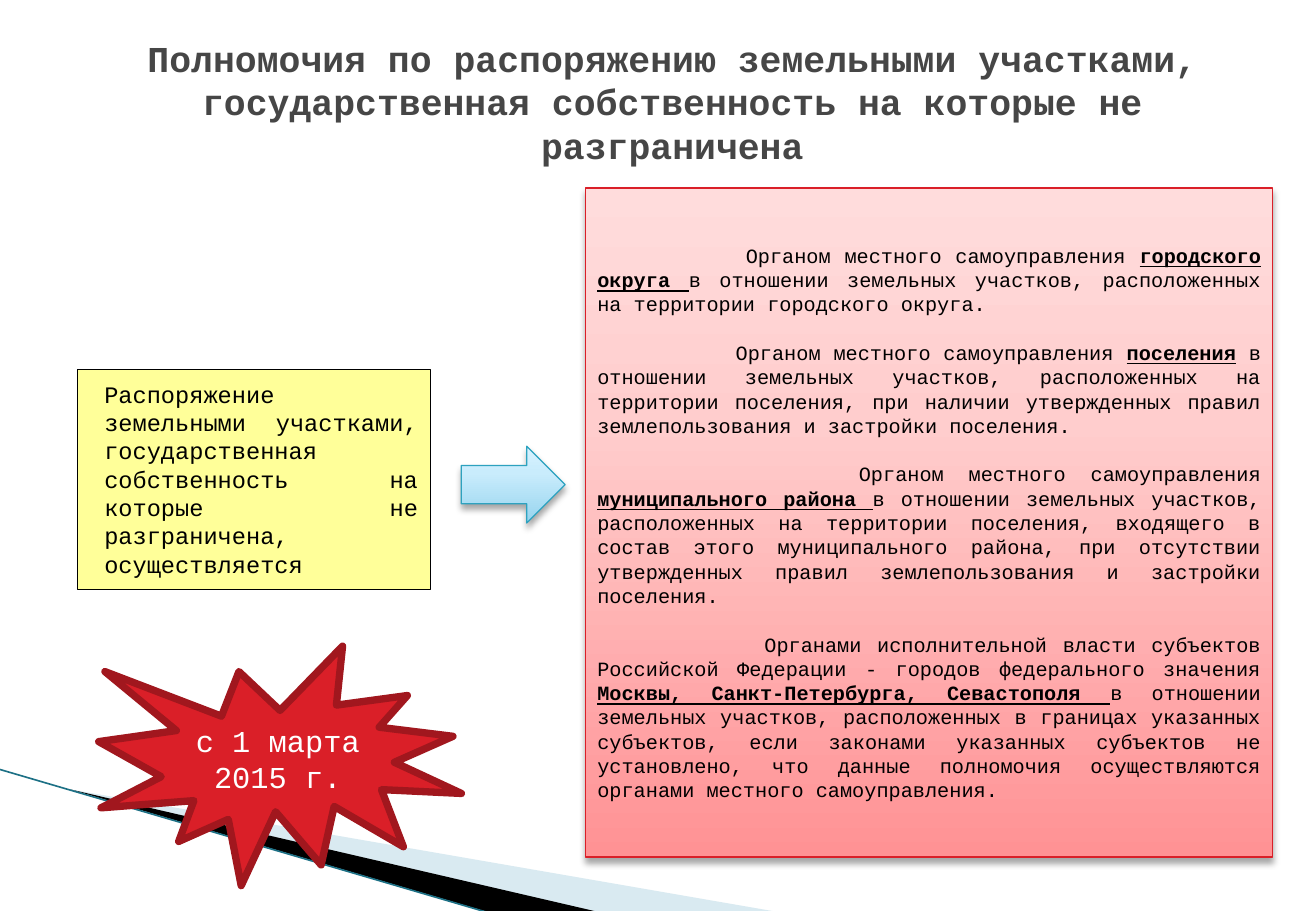
from dataclasses import dataclass

from lxml import etree
from pptx import Presentation
from pptx.dml.color import RGBColor
from pptx.enum.shapes import MSO_CONNECTOR, MSO_SHAPE
from pptx.enum.text import MSO_ANCHOR, PP_ALIGN
from pptx.oxml.ns import qn
from pptx.util import Pt

STRAIGHT = MSO_CONNECTOR.STRAIGHT
RECTANGLE, ARROW, BURST = MSO_SHAPE.RECTANGLE, MSO_SHAPE.RIGHT_ARROW, MSO_SHAPE.EXPLOSION1
TOP, MIDDLE = MSO_ANCHOR.TOP, MSO_ANCHOR.MIDDLE
CENTER, JUSTIFY = PP_ALIGN.CENTER, PP_ALIGN.JUSTIFY


@dataclass(frozen=True)
class Theme:
    font: str = "Courier New"
    title_size: float = 21.6
    topic_size: float = 14
    powers_size: float = 12
    date_size: float = 18
    title: str = "464646"
    ink: str = "000000"
    white: str = "FFFFFF"
    yellow: str = "FFFF99"
    red: str = "DA1F28"
    dark_red: str = "A1171E"
    teal: str = "2DA2BF"
    sweep_line: str = "1C7085"
    sweep_pale: str = "A0CBDC"
    pink_stops: tuple = ((0, "FF9294"), (65, "FFCDCD"), (100, "FFDCDC"))
    blue_stops: tuple = ((0, "96D4EE"), (65, "C9ECFC"), (100, "D7F2FF"))
    thin: float = 0.75
    thick: float = 4.33


THEME = Theme()

TITLE = ("Полномочия по распоряжению земельными участками, "
         "государственная собственность на которые не разграничена")
TOPIC = ("Распоряжение земельными участками, государственная собственность "
         "на которые не разграничена, осуществляется")
START_DATE = "с 1 марта 2015 г."
# First-line indent, opening words, emphasised authority, remainder
POWERS = [
    (88, "Органом местного самоуправления ", "городского округа ",
     "в отношении земельных участков, расположенных на территории городского округа."),
    (82, "Органом местного самоуправления ", "поселения",
     " в отношении земельных участков, расположенных на территории поселения, "
     "при наличии утвержденных правил землепользования и застройки поселения."),
    (155, "Органом местного самоуправления ", "муниципального района ",
     "в отношении земельных участков, расположенных на территории поселения, "
     "входящего в состав этого муниципального района, при отсутствии "
     "утвержденных правил землепользования и застройки поселения."),
    (99, "Органами исполнительной власти субъектов Российской Федерации - "
     "городов федерального значения ", "Москвы, Санкт-Петербурга, Севастополя ",
     "в отношении земельных участков, расположенных в границах указанных "
     "субъектов, если законами указанных субъектов не установлено, что данные "
     "полномочия осуществляются органами местного самоуправления."),
]


def rgb(value):
    return RGBColor.from_string(value)


def add_run(paragraph, text, size, color, bold=False, underline=False):
    run = paragraph.add_run()
    run.text = text
    font = run.font
    font.name, font.size, font.bold, font.underline = THEME.font, Pt(size), bold, underline
    font.color.rgb = rgb(color)


def open_text(shape, anchor, align):
    """Turn wrapping on and return the first paragraph."""
    frame = shape.text_frame
    frame.word_wrap = True
    frame.vertical_anchor = anchor
    paragraph = frame.paragraphs[0]
    paragraph.alignment = align
    return paragraph


def add_panel(slide, kind, box, line, width, fill=None):
    panel = slide.shapes.add_shape(kind, *map(Pt, box))
    panel.shadow.inherit = False
    if fill:
        panel.fill.solid()
        panel.fill.fore_color.rgb = rgb(fill)
    panel.line.color.rgb = rgb(line)
    panel.line.width = Pt(width)
    return panel


def add_glossy_panel(slide, kind, box, line, stops):
    """Panel with a bottom-to-top gradient and a soft shadow below."""
    panel = add_panel(slide, kind, box, line, THEME.thin)
    panel.fill.gradient()
    panel.fill.gradient_angle = 90
    properties = panel._element.spPr
    stop_list = properties.find(".//" + qn("a:gsLst"))
    for old_stop in list(stop_list):
        stop_list.remove(old_stop)
    for position, color in stops:
        stop = etree.SubElement(stop_list, qn("a:gs"), pos=str(position * 1000))
        etree.SubElement(stop, qn("a:srgbClr"), val=color)
    shadow = etree.SubElement(
        properties.find(qn("a:effectLst")), qn("a:outerShdw"),
        blurRad=str(Pt(4)), dist=str(Pt(3)), dir="5400000", rotWithShape="0")
    tint = etree.SubElement(shadow, qn("a:srgbClr"), val=THEME.ink)
    etree.SubElement(tint, qn("a:alpha"), val="35000")
    return panel


def add_wedge(slide, points, color, opacity=100):
    start, *rest = [(Pt(x), Pt(y)) for x, y in points]
    builder = slide.shapes.build_freeform(*start)
    builder.add_line_segments(rest)
    wedge = builder.convert_to_shape()
    wedge.shadow.inherit = False
    wedge.fill.solid()
    wedge.fill.fore_color.rgb = rgb(color)
    wedge.line.fill.background()
    if opacity < 100:
        tint = wedge._element.spPr.find(qn("a:solidFill"))[0]
        etree.SubElement(tint, qn("a:alpha"), val=str(opacity * 1000))


def add_sweep(slide, box):
    """Corner decoration: two wedges and an edge line."""
    left, top, width, height = box
    bottom = top + height
    tip = (left + 42.5, top + 12)
    add_wedge(slide, [tip, (left + width, bottom), (left + 356, bottom)],
              THEME.sweep_pale, 40)
    add_wedge(slide, [tip, (left + 357, bottom), (left + 291, bottom)], THEME.ink)
    edge = slide.shapes.add_connector(
        STRAIGHT, Pt(left), Pt(top), Pt(left + 290), Pt(bottom))
    edge.line.color.rgb = rgb(THEME.sweep_line)
    edge.line.width = Pt(0.95)
    etree.SubElement(edge._element.spPr, qn("a:effectLst"))


def add_title(slide, box):
    title = slide.shapes.add_textbox(*map(Pt, box))
    add_run(open_text(title, MIDDLE, CENTER), TITLE, THEME.title_size, THEME.title, bold=True)


def add_topic(slide, box):
    topic = add_panel(slide, RECTANGLE, box, THEME.ink, THEME.thin, THEME.yellow)
    topic.text_frame.margin_left = Pt(15.8)
    topic.text_frame.margin_top = Pt(6)
    add_run(open_text(topic, TOP, JUSTIFY), TOPIC, THEME.topic_size, THEME.ink)


def add_powers(slide, box):
    powers = add_glossy_panel(slide, RECTANGLE, box, THEME.red, THEME.pink_stops)
    paragraph = open_text(powers, MIDDLE, JUSTIFY)
    for index, (indent, opening, authority, remainder) in enumerate(POWERS):
        if index:
            paragraph = powers.text_frame.add_paragraph()
            paragraph.alignment = JUSTIFY
            paragraph.space_before = Pt(14.4)
        paragraph._p.get_or_add_pPr().set("indent", str(Pt(indent)))
        for text, strong in ((opening, False), (authority, True), (remainder, False)):
            add_run(paragraph, text, THEME.powers_size, THEME.ink, strong, strong)


def add_start_date(slide, box):
    burst = add_panel(slide, BURST, box, THEME.dark_red, THEME.thick, THEME.red)
    add_run(open_text(burst, MIDDLE, CENTER), START_DATE, THEME.date_size, THEME.white)


def main():
    deck = Presentation()
    deck.slide_width, deck.slide_height = Pt(780), Pt(540)
    slide = deck.slides.add_slide(deck.slide_layouts[6])
    add_sweep(slide, (-0.5, 456, 464, 85))
    add_title(slide, (70.5, 15, 656, 90))
    add_topic(slide, (46, 219, 209, 130.5))
    add_powers(slide, (347, 111.5, 407.5, 396.5))
    add_glossy_panel(slide, ARROW, (273.5, 264.5, 61.5, 45.5), THEME.teal, THEME.blue_stops)
    add_start_date(slide, (58.5, 383, 215, 142))
    deck.save("out.pptx")


if __name__ == "__main__":
    main()
